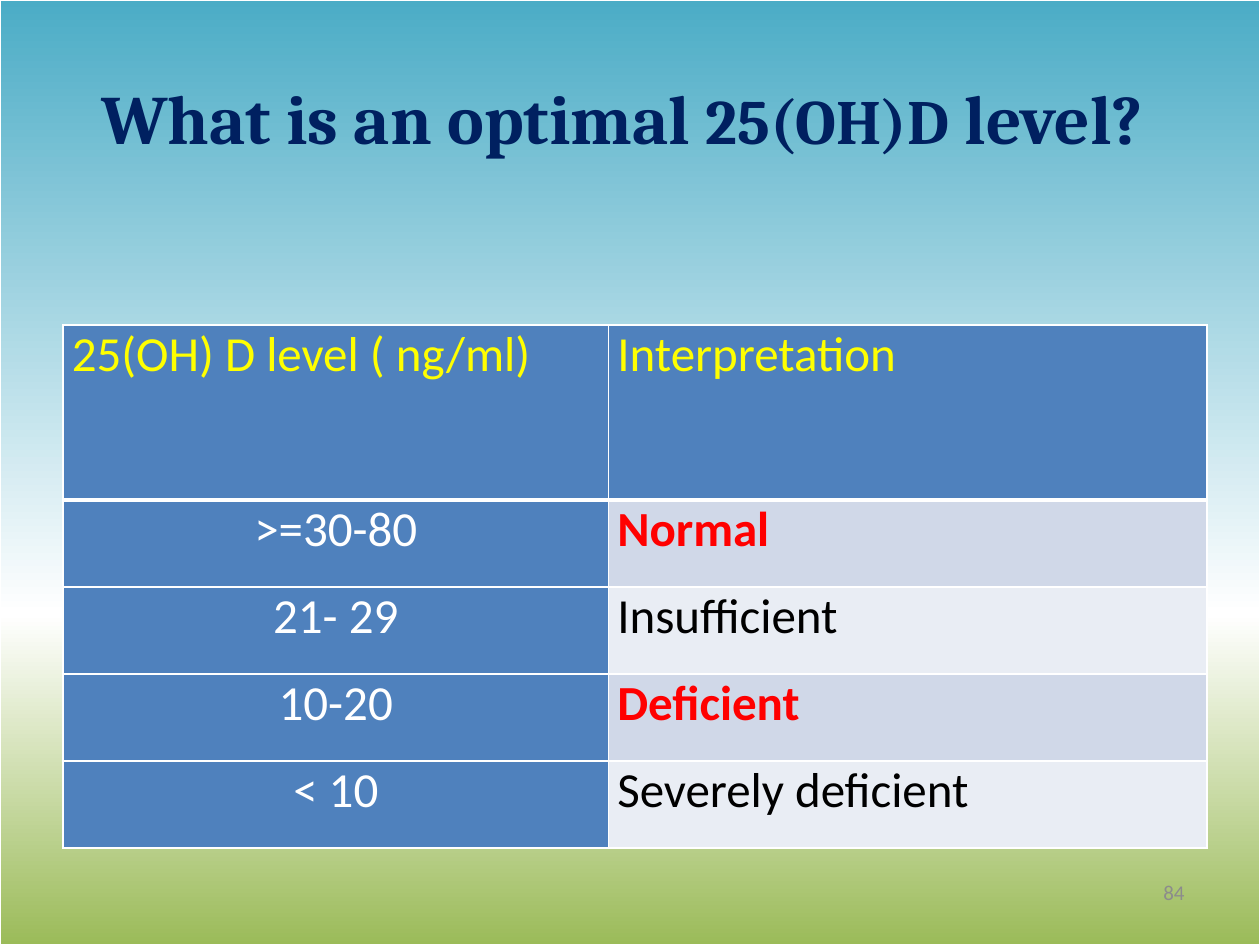
from copy import deepcopy

from lxml.etree import SubElement
from pptx import Presentation
from pptx.dml.color import RGBColor
from pptx.enum.shapes import MSO_SHAPE
from pptx.enum.text import MSO_ANCHOR, PP_ALIGN
from pptx.oxml.ns import qn
from pptx.util import Inches, Pt

THEME = {
    "sky": "4BACC6", "horizon": "FFFFFF", "grass": "9BBB59",
    "frame": "FFFFFF", "title": "002060", "page": "8C8C8C",
    "blue": "4F81BD", "bands": ("D0D8E8", "E9EDF4"),
    "header_text": "FFFF00", "level_text": "FFFFFF",
    "plain_text": "000000", "alert_text": "FF0000",
    "title_font": "Cambria", "body_font": "Calibri",
    "title_size": 39.6, "formula_size": 36, "table_size": 28, "page_size": 12,
}
TITLE = [
    ("What is an optimal ", "title_size"),
    ("25(OH)D", "formula_size"),
    (" level? ", "title_size"),
]
HEADERS = ("25(OH) D level ( ng/ml)", "Interpretation")
LEVELS = [
    (">=30-80", "Normal", True),
    ("21- 29", "Insufficient", False),
    ("10-20", "Deficient", True),
    ("< 10", "Severely deficient", False),
]
PAGE_NUMBER = "84"
COLUMN_WIDTHS = (4.33, 4.75)
HEADER_HEIGHT, LEVEL_HEIGHT = 1.39, 0.69


def style(run, font, size, color, bold=False):
    run.font.name = font
    run.font.size = Pt(size)
    run.font.bold = bold
    run.font.color.rgb = RGBColor.from_string(color)


def paint_background(slide):
    fill = slide.background.fill
    fill.gradient()
    fill.gradient_angle = 90
    first = fill.gradient_stops[0]._gs
    first.addnext(deepcopy(first))
    stops = ((0, "grass"), (0.35, "horizon"), (1, "sky"))
    for stop, (position, name) in zip(fill.gradient_stops, stops):
        stop.position = position
        stop.color.rgb = RGBColor.from_string(THEME[name])


def add_frame(slide, width, height):
    frame = slide.shapes.add_shape(MSO_SHAPE.RECTANGLE, 0, 0, width, height)
    frame.shadow.inherit = False
    frame.fill.background()
    frame.line.color.rgb = RGBColor.from_string(THEME["frame"])
    frame.line.width = Pt(1)


def add_text(slide, box, alignment):
    text_frame = slide.shapes.add_textbox(*map(Inches, box)).text_frame
    text_frame.word_wrap = True
    text_frame.vertical_anchor = MSO_ANCHOR.MIDDLE
    paragraph = text_frame.paragraphs[0]
    paragraph.alignment = alignment
    return paragraph


def add_borders(cell, bottom):
    properties = cell._tc.get_or_add_tcPr()
    edges = (("a:lnL", 1), ("a:lnR", 1), ("a:lnT", 1), ("a:lnB", bottom))
    for tag, width in edges:
        edge = SubElement(properties, qn(tag), w=str(Pt(width)))
        solid = SubElement(edge, qn("a:solidFill"))
        SubElement(solid, qn("a:srgbClr"), val=THEME["frame"])


def fill_cell(cell, text, color, fill, alignment=PP_ALIGN.LEFT, bold=False, bottom=1):
    add_borders(cell, bottom)
    cell.fill.solid()
    cell.fill.fore_color.rgb = RGBColor.from_string(fill)
    cell.margin_left = cell.margin_right = Inches(0.07)
    cell.margin_top = cell.margin_bottom = 0
    paragraph = cell.text_frame.paragraphs[0]
    paragraph.text = text
    paragraph.alignment = alignment
    style(paragraph.runs[0], THEME["body_font"], THEME["table_size"], color, bold)


def add_levels_table(slide):
    heights = [HEADER_HEIGHT] + [LEVEL_HEIGHT] * len(LEVELS)
    table = slide.shapes.add_table(
        len(heights), len(COLUMN_WIDTHS), Inches(0.5), Inches(2.58),
        Inches(sum(COLUMN_WIDTHS)), Inches(sum(heights))).table
    for column, width in zip(table.columns, COLUMN_WIDTHS):
        column.width = Inches(width)
    for row, height in zip(table.rows, heights):
        row.height = Inches(height)
    for index, header in enumerate(HEADERS):
        fill_cell(table.cell(0, index), header, THEME["header_text"], THEME["blue"], bottom=3)
    for index, (level, meaning, alert) in enumerate(LEVELS):
        fill_cell(table.cell(index + 1, 0), level, THEME["level_text"],
                  THEME["blue"], PP_ALIGN.CENTER)
        fill_cell(table.cell(index + 1, 1), meaning,
                  THEME["alert_text" if alert else "plain_text"],
                  THEME["bands"][index % 2], bold=alert)


def main():
    deck = Presentation()
    deck.slide_width, deck.slide_height = Inches(10), Inches(7.5)
    slide = deck.slides.add_slide(deck.slide_layouts[6])
    paint_background(slide)
    add_frame(slide, deck.slide_width, deck.slide_height)

    title = add_text(slide, (0.5, 0.3, 9, 1.25), PP_ALIGN.CENTER)
    for text, size in TITLE:
        run = title.add_run()
        run.text = text
        style(run, THEME["title_font"], THEME[size], THEME["title"], True)

    page = add_text(slide, (7.17, 6.88, 2.33, 0.4), PP_ALIGN.RIGHT)
    page.text = PAGE_NUMBER
    style(page.runs[0], THEME["body_font"], THEME["page_size"], THEME["page"])

    add_levels_table(slide)
    deck.save("out.pptx")


if __name__ == "__main__":
    main()
